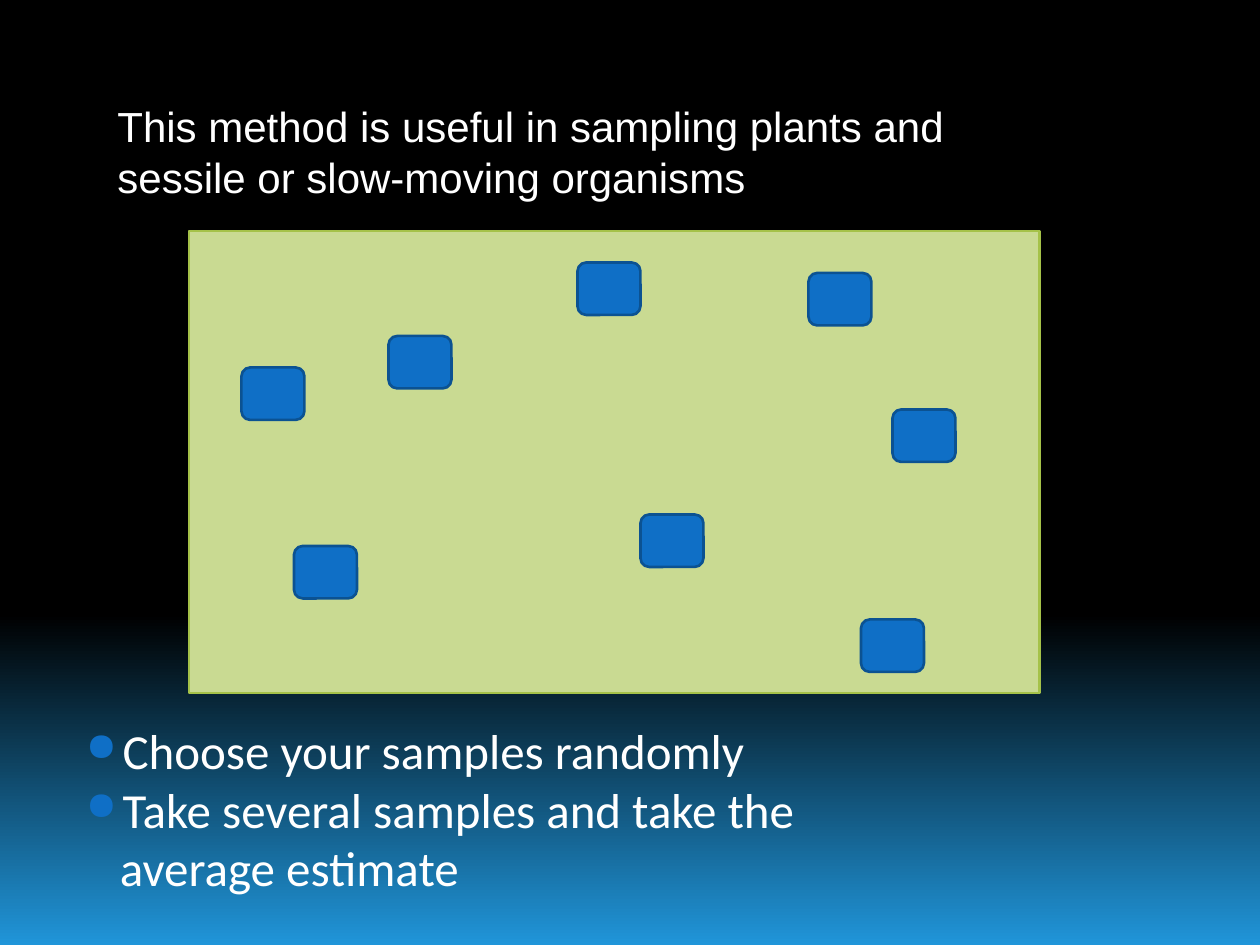
from lxml import etree
from pptx import Presentation
from pptx.dml.color import RGBColor
from pptx.enum.shapes import MSO_SHAPE
from pptx.oxml.ns import qn
from pptx.util import Pt

RECTANGLE = MSO_SHAPE.RECTANGLE
ROUNDED = MSO_SHAPE.ROUNDED_RECTANGLE

COLORS = {
    "black": "000000",
    "sky": "2095D9",
    "white": "FFFFFF",
    "field": "C9DA92",
    "field_edge": "A5C249",
    "blue": "0F6FC6",
    "blue_edge": "0B5292",
}
INTRO_FONT = {"name": "Arial", "size": Pt(24)}
ADVICE_FONT = {"name": "Calibri", "size": Pt(28)}

# Left and top of each sample square within the field
QUADRAT_SIZE = (36, 30)
QUADRATS = [(30, 78), (222, 18), (402, 102), (258, 162),
            (354, 24), (60, 180), (114, 60), (384, 222)]

# Text, left margin, first-line indent, bulleted
ADVICE = [
    ("Choose your samples randomly", 21, -21, True),
    ("Take several samples and take the", 21, -21, True),
    ("average estimate", 19.5, 0, False),
]


def color(name):
    return RGBColor.from_string(COLORS[name])


def paint_background(slide):
    fill = slide.background.fill
    fill.gradient()
    fill.gradient_angle = 270
    for stop, position, name in zip(fill.gradient_stops, (0.65, 1), ("black", "sky")):
        stop.position = position
        stop.color.rgb = color(name)


def add_text_frame(slide, box):
    frame = slide.shapes.add_textbox(*map(Pt, box)).text_frame
    frame.word_wrap = True
    return frame


def write(para, text, font_format):
    span = para.add_run()
    span.text = text
    for key, value in font_format.items():
        setattr(span.font, key, value)
    span.font.color.rgb = color("white")


def add_block(slide, kind, box, fill, edge):
    shape = slide.shapes.add_shape(kind, *map(Pt, box))
    shape.shadow.inherit = False
    shape.fill.solid()
    shape.fill.fore_color.rgb = color(fill)
    shape.line.color.rgb = color(edge)
    shape.line.width = Pt(1.5)


def set_indent(para, margin, indent, bulleted):
    properties = para._p.get_or_add_pPr()
    properties.set("marL", str(Pt(margin)))
    properties.set("indent", str(Pt(indent)))
    if not bulleted:
        etree.SubElement(properties, qn("a:buNone"))
        return
    bullet_color = etree.SubElement(properties, qn("a:buClr"))
    etree.SubElement(bullet_color, qn("a:srgbClr"), val=COLORS["blue"])
    etree.SubElement(properties, qn("a:buSzPct"), val="80000")
    etree.SubElement(properties, qn("a:buChar"), char="●")


def add_intro(slide, box):
    frame = add_text_frame(slide, box)
    write(frame.paragraphs[0],
          "This method is useful in sampling plants and sessile or slow-moving organisms",
          INTRO_FONT)


def add_field(slide, box):
    left, top = box[:2]
    add_block(slide, RECTANGLE, box, "field", "field_edge")
    for x, y in QUADRATS:
        add_block(slide, ROUNDED, (left + x, top + y, *QUADRAT_SIZE), "blue", "blue_edge")


def add_advice(slide, box):
    frame = add_text_frame(slide, box)
    for number, (text, margin, indent, bulleted) in enumerate(ADVICE):
        para = frame.add_paragraph() if number else frame.paragraphs[0]
        set_indent(para, margin, indent, bulleted)
        write(para, text, ADVICE_FONT)


def main():
    deck = Presentation()
    deck.slide_width, deck.slide_height = Pt(720), Pt(540)
    slide = deck.slides.add_slide(deck.slide_layouts[6])
    paint_background(slide)
    add_intro(slide, (60, 54, 492, 66))
    add_field(slide, (108, 132, 486, 264))
    add_advice(slide, (42, 408, 648, 110))
    deck.save("out.pptx")


if __name__ == "__main__":
    main()
